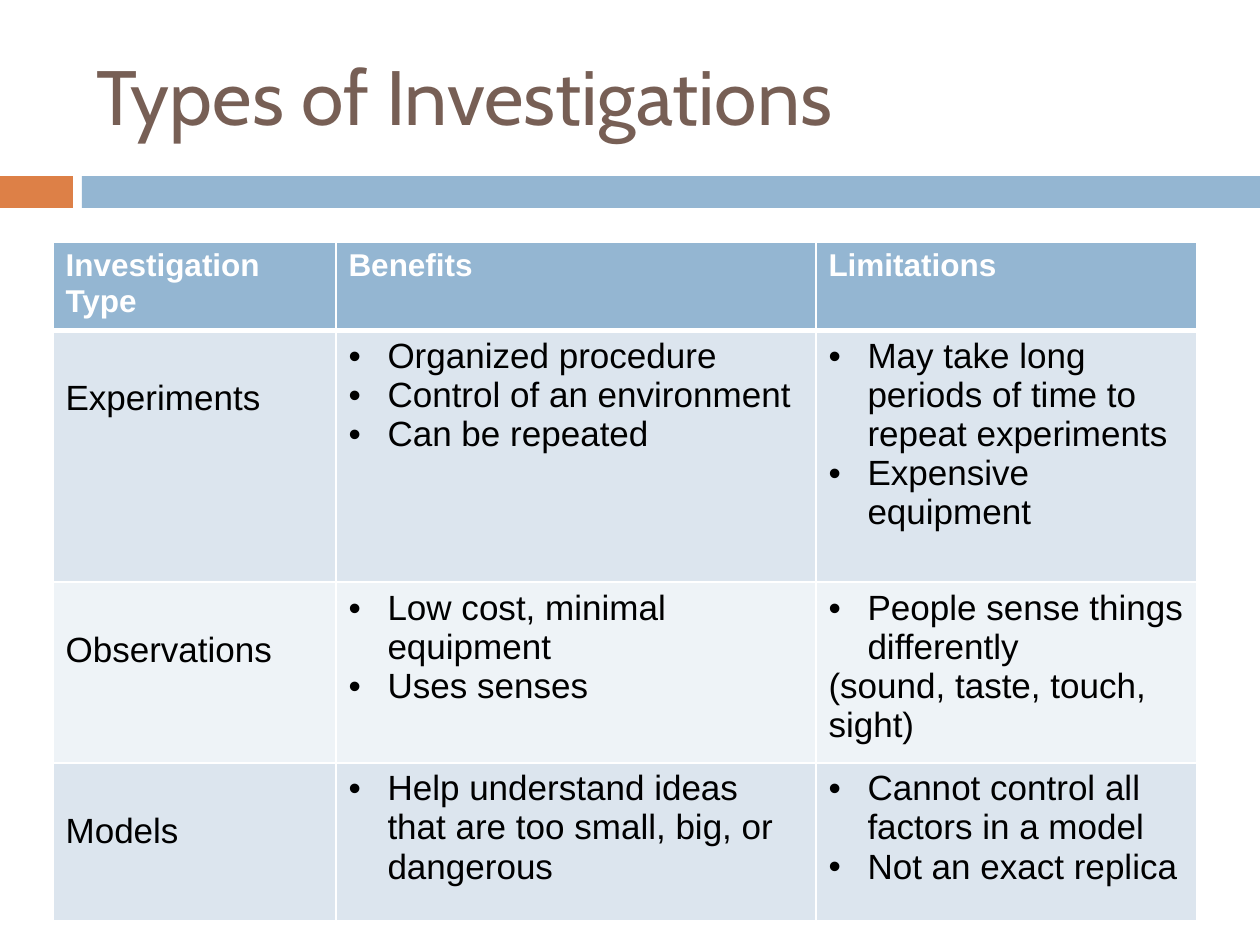
from lxml.etree import SubElement
from pptx import Presentation
from pptx.dml.color import RGBColor
from pptx.enum.shapes import MSO_SHAPE
from pptx.enum.text import MSO_ANCHOR
from pptx.oxml import parse_xml
from pptx.oxml.ns import nsdecls, qn
from pptx.util import Emu, Pt

PX_PER_INCH = 126
WHITE = RGBColor(0xFF, 0xFF, 0xFF)
BLACK = RGBColor(0x00, 0x00, 0x00)
BROWN = RGBColor(0x77, 0x5F, 0x55)
ORANGE = RGBColor(0xDD, 0x80, 0x47)
BLUE = RGBColor(0x94, 0xB6, 0xD2)
BAND_DARK = RGBColor(0xDC, 0xE5, 0xEE)
BAND_LIGHT = RGBColor(0xEE, 0xF3, 0xF7)

BULLET = "• "
HEADINGS = ["Investigation Type", "Benefits", "Limitations"]
INVESTIGATIONS = [
    (["Experiments"],
     ["• Organized procedure", "• Control of an environment", "• Can be repeated"],
     ["• May take long periods of time to repeat experiments",
      "• Expensive equipment"]),
    (["Observations"],
     ["• Low cost, minimal equipment", "• Uses senses"],
     ["• People sense things differently", "(sound, taste, touch, sight)"]),
    (["Models"],
     ["• Help understand ideas that are too small, big, or dangerous"],
     ["• Cannot control all factors in a model", "• Not an exact replica"]),
]
COLUMN_WIDTHS = [283, 480, 381]
ROW_HEIGHTS = [64, 252, 158, 158]
NAME_TOP_MARGIN = 49


def px(length):
    return Emu(round(length * 914400 / PX_PER_INCH))


class SlideBuilder:
    title_font = "Cabin"
    body_font = "Arial"
    bullet_indent = 39

    def __init__(self, slide):
        self.slide = slide

    def add_run(self, paragraph, text, font, size, color, bold=False):
        run = paragraph.add_run()
        run.text = text
        run.font.name = font
        run.font.size = Pt(size)
        run.font.bold = bold
        run.font.color.rgb = color

    def add_bar(self, left, top, width, height, color):
        shape = self.slide.shapes.add_shape(
            MSO_SHAPE.RECTANGLE, px(left), px(top), px(width), px(height))
        shape.shadow.inherit = False
        shape.fill.solid()
        shape.fill.fore_color.rgb = color
        shape.line.fill.background()

    def add_title(self, left, top, width, height, text):
        box = self.slide.shapes.add_textbox(px(left), px(top), px(width), px(height))
        frame = box.text_frame
        frame.word_wrap = True
        frame.vertical_anchor = MSO_ANCHOR.MIDDLE
        self.add_run(frame.paragraphs[0], text, self.title_font, 44, BROWN)

    def add_bullet(self, paragraph):
        properties = paragraph._p.get_or_add_pPr()
        indent = px(self.bullet_indent)
        properties.set("marL", str(indent))
        properties.set("indent", str(-indent))
        SubElement(properties, qn("a:buFont"), typeface=self.body_font)
        SubElement(properties, qn("a:buChar"), char=BULLET.strip())

    def set_borders(self, cell, bottom_width):
        """Draw white cell borders, 1 pt except for the bottom one."""
        properties = cell._tc.get_or_add_tcPr()
        widths = {"lnL": 1, "lnR": 1, "lnT": 1, "lnB": bottom_width}
        for index, (side, width) in enumerate(widths.items()):
            properties.insert(index, parse_xml(
                f'<a:{side} {nsdecls("a")} w="{Pt(width)}"><a:solidFill>'
                f'<a:srgbClr val="{WHITE}"/></a:solidFill></a:{side}>'))

    def fill_cell(self, cell, lines, fill, size, color, bold=False, bottom_width=1):
        cell.fill.solid()
        cell.fill.fore_color.rgb = fill
        self.set_borders(cell, bottom_width)
        frame = cell.text_frame
        for index, line in enumerate(lines):
            paragraph = frame.add_paragraph() if index else frame.paragraphs[0]
            if line.startswith(BULLET):
                self.add_bullet(paragraph)
            self.add_run(paragraph, line.removeprefix(BULLET),
                         self.body_font, size, color, bold)

    def add_table(self, left, top, column_widths, row_heights, headings, rows):
        table = self.slide.shapes.add_table(
            len(row_heights), len(column_widths), px(left), px(top),
            px(sum(column_widths)), px(sum(row_heights))).table
        for column, width in zip(table.columns, column_widths):
            column.width = px(width)
        for row, height in zip(table.rows, row_heights):
            row.height = px(height)
        for column, heading in enumerate(headings):
            self.fill_cell(table.cell(0, column), [heading], BLUE, 18, WHITE,
                           bold=True, bottom_width=3)
        for row, contents in enumerate(rows, start=1):
            band = BAND_DARK if row % 2 else BAND_LIGHT
            for column, lines in enumerate(contents):
                self.fill_cell(table.cell(row, column), lines, band, 20, BLACK)
            table.cell(row, 0).margin_top = px(NAME_TOP_MARGIN)


def main():
    presentation = Presentation()
    presentation.slide_width = px(1260)
    presentation.slide_height = px(945)
    builder = SlideBuilder(
        presentation.slides.add_slide(presentation.slide_layouts[6]))
    builder.add_bar(0, 176, 73, 32, ORANGE)
    builder.add_bar(82, 176, 1178, 32, BLUE)
    builder.add_title(84, 38, 1113, 113, "Types of Investigations")
    builder.add_table(53, 242, COLUMN_WIDTHS, ROW_HEIGHTS, HEADINGS, INVESTIGATIONS)
    presentation.save("out.pptx")


if __name__ == "__main__":
    main()
